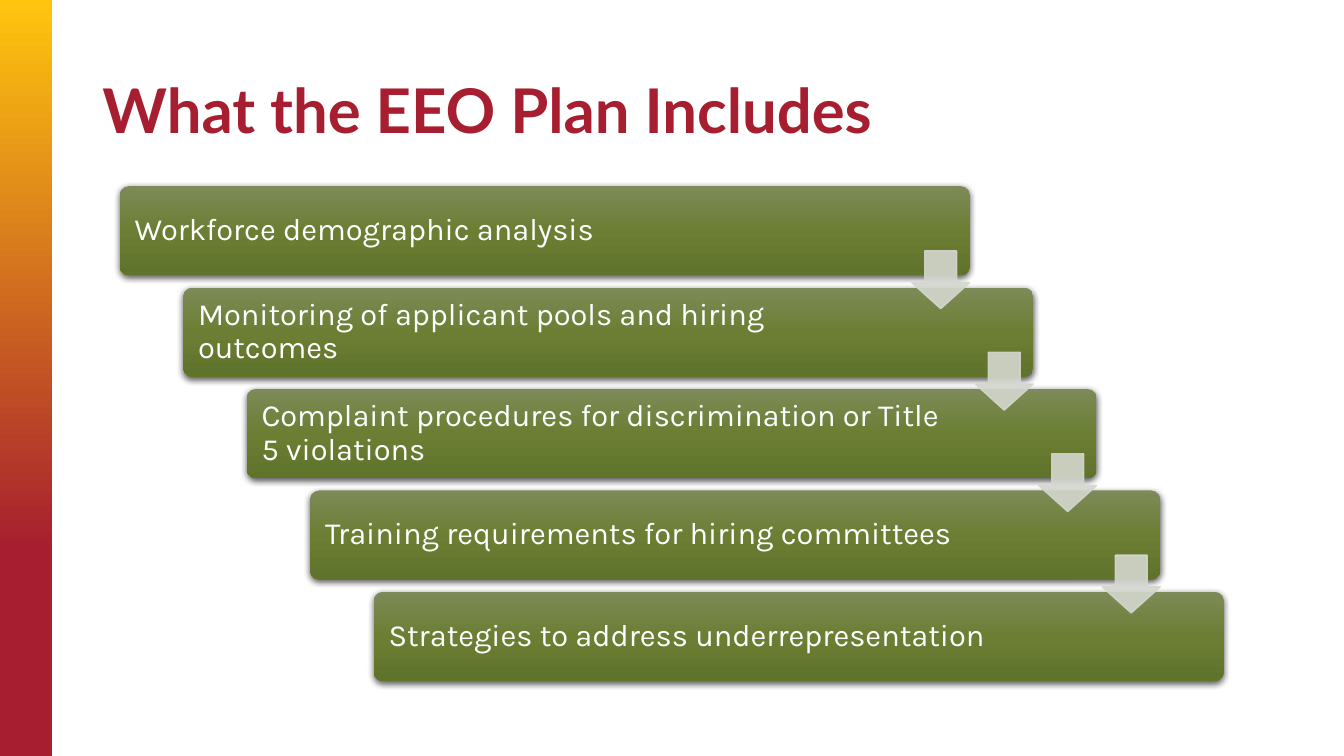
import pptx
import pptx.util
import pptx.dml.color
import pptx.enum.shapes
import pptx.enum.text
import pptx.oxml.ns
from lxml import etree

Pt = pptx.util.Pt
RGB = pptx.dml.color.RGBColor.from_string
qn = pptx.oxml.ns.qn
SHAPES = pptx.enum.shapes.MSO_SHAPE
LEFT = pptx.enum.text.PP_ALIGN.LEFT
MIDDLE = pptx.enum.text.MSO_ANCHOR.MIDDLE

COLOURS = {
    "red": "A61E2F", "gold": "FFC50E", "white": "FFFFFF", "black": "000000",
    "green_top": "7C8B58", "green_mid": "6B7E33", "green_low": "60732A",
    "arrow": "D4D7CE",
}


def add_colour(parent, name, alpha=100):
    colour = etree.SubElement(parent, qn("a:srgbClr"), val=COLOURS[name])
    if alpha < 100:
        etree.SubElement(colour, qn("a:alpha"), val=str(alpha * 1000))


def fill_gradient(shape, angle, stops):
    shape.fill.gradient()
    shape.fill.gradient_angle = angle
    stop_list = shape._element.spPr.find(".//" + qn("a:gsLst"))
    for old_stop in list(stop_list):
        stop_list.remove(old_stop)
    for position, name in stops:
        stop = etree.SubElement(stop_list, qn("a:gs"), pos=str(position * 1000))
        add_colour(stop, name)


deck = pptx.Presentation()
deck.slide_width, deck.slide_height = Pt(960), Pt(540)
slide = deck.slides.add_slide(deck.slide_layouts[5])

# Colour strip on the left edge
strip = slide.shapes.add_shape(SHAPES.RECTANGLE, 0, 0, Pt(37.3), Pt(540))
strip.shadow.inherit = False
strip.line.fill.background()
fill_gradient(strip, 90, [(27, "red"), (100, "gold")])

# Title
title = slide.shapes.title
title.left, title.top, title.width, title.height = Pt(66), Pt(28.8), Pt(828), Pt(104.4)
title.text_frame.text = "What the EEO Plan Includes"
title.text_frame.vertical_anchor = MIDDLE
heading = title.text_frame.paragraphs[0]
heading.alignment = LEFT
heading.line_spacing = 0.9
for key, value in {"name": "Lato", "size": Pt(44), "bold": True}.items():
    setattr(heading.font, key, value)
heading.font.color.rgb = RGB(COLOURS["red"])

# Staircase of plan parts
plan_parts = [
    "Workforce demographic analysis",
    "Monitoring of applicant pools and hiring outcomes",
    "Complaint procedures for discrimination or Title 5 violations",
    "Training requirements for hiring committees",
    "Strategies to address underrepresentation",
]
STEP_X, STEP_Y = 45.36, 72.45
BAR_LEFT, BAR_TOP, BAR_WIDTH, BAR_HEIGHT = 85.6, 133, 607, 63.6
ARROW_SIZE = 41.3
ARROW_LEFT, ARROW_TOP = BAR_LEFT + BAR_WIDTH - ARROW_SIZE, 179.2
bar_frame = {
    "word_wrap": True, "vertical_anchor": MIDDLE,
    "margin_left": Pt(8.7), "margin_right": Pt(93.5),
    "margin_top": Pt(6.5), "margin_bottom": Pt(6.5),
}

for step, part in enumerate(plan_parts):
    bar = slide.shapes.add_shape(
        SHAPES.ROUNDED_RECTANGLE, Pt(BAR_LEFT + step * STEP_X),
        Pt(BAR_TOP + step * STEP_Y), Pt(BAR_WIDTH), Pt(BAR_HEIGHT))
    bar.adjustments[0] = 0.1
    bar.line.fill.background()
    fill_gradient(bar, 270, [(0, "green_top"), (50, "green_mid"), (100, "green_low")])

    # Soft shadow below the bar
    bar.shadow.inherit = False
    shadow = etree.SubElement(
        bar._element.spPr.find(qn("a:effectLst")), qn("a:outerShdw"),
        blurRad=str(Pt(4.5)), dist=str(Pt(1.5)), dir="5400000", rotWithShape="0")
    add_colour(shadow, "black", 63)

    for key, value in bar_frame.items():
        setattr(bar.text_frame, key, value)
    bar.text_frame.text = part
    label = bar.text_frame.paragraphs[0]
    label.alignment = LEFT
    label.line_spacing = 0.9
    label.font.name, label.font.size = "Karla", Pt(22)
    label.font.color.rgb = RGB(COLOURS["white"])

# Arrows leading from each part to the next
for step in range(len(plan_parts) - 1):
    arrow = slide.shapes.add_shape(
        SHAPES.DOWN_ARROW, Pt(ARROW_LEFT + step * STEP_X),
        Pt(ARROW_TOP + step * STEP_Y), Pt(ARROW_SIZE), Pt(ARROW_SIZE))
    arrow.adjustments[0], arrow.adjustments[1] = 0.55, 0.45
    arrow.shadow.inherit = False
    arrow.line.width = Pt(1)
    for fill in (arrow.fill, arrow.line.fill):
        fill.solid()
        fill.fore_color.rgb = RGB(COLOURS["arrow"])
    for colour in arrow._element.spPr.iter(qn("a:srgbClr")):
        etree.SubElement(colour, qn("a:alpha"), val="90000")

deck.save("out.pptx")
